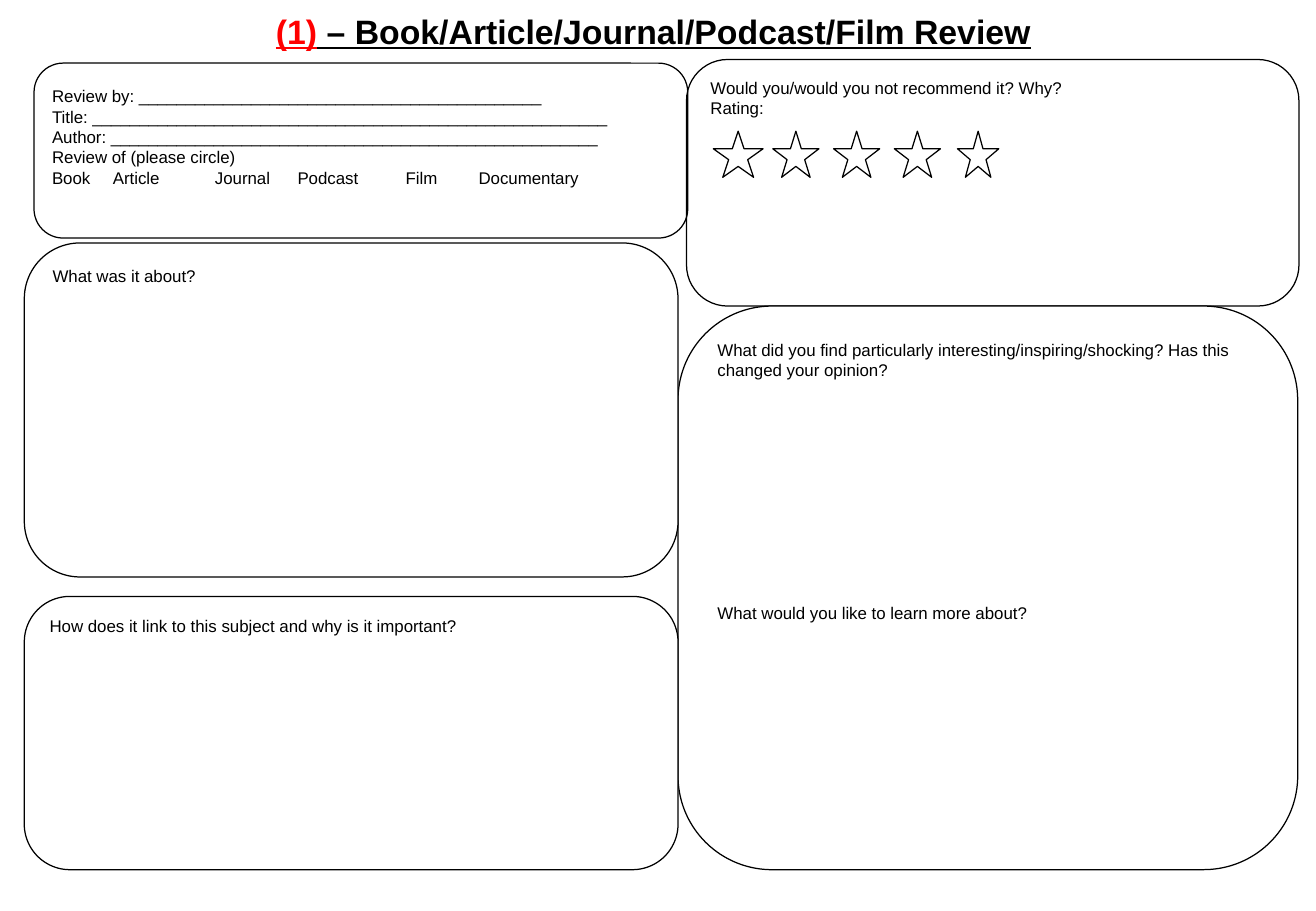
from lxml import etree
from pptx import Presentation
from pptx import util as u
from pptx.dml.color import RGBColor
from pptx.enum import shapes, text
from pptx.oxml.ns import qn

PX = 9144  # 100 px to the inch


def color(value):
    return RGBColor.from_string(value)


class ReviewSheet:
    font, ink, paper, accent = "Arial", "000000", "FFFFFF", "FF0000"
    body_size, title_size, line_width = 10, 20, 0.75

    def __init__(self, width, height):
        self.presentation = Presentation()
        self.presentation.slide_width = u.Emu(width * PX)
        self.presentation.slide_height = u.Emu(height * PX)
        self.slide = self.presentation.slides.add_slide(self.presentation.slide_layouts[6])

    def style_run(self, run, size, ink):
        run.font.name = self.font
        run.font.size = u.Pt(size)
        run.font.color.rgb = color(ink)

    def set_lines(self, shape, lines):
        frame = shape.text_frame
        frame.word_wrap = True
        frame.vertical_anchor = text.MSO_ANCHOR.TOP
        frame.text = "\n".join(lines)
        for paragraph in frame.paragraphs:
            paragraph.alignment = text.PP_ALIGN.LEFT
            for run in paragraph.runs:
                self.style_run(run, self.body_size, self.ink)
        return frame.paragraphs

    def outline(self, kind, box, filled=True):
        shape = self.slide.shapes.add_shape(kind, *(u.Emu(length * PX) for length in box))
        shape.shadow.inherit = False
        if filled:
            shape.fill.solid()
            shape.fill.fore_color.rgb = color(self.paper)
        else:
            shape.fill.background()
        shape.line.color.rgb = color(self.ink)
        shape.line.width = u.Pt(self.line_width)
        return shape

    def panel(self, box, lines=(), filled=True):
        shape = self.outline(shapes.MSO_SHAPE.FLOWCHART_ALTERNATE_PROCESS, box, filled)
        return self.set_lines(shape, lines)

    def label(self, box, lines):
        shape = self.slide.shapes.add_textbox(*(u.Emu(length * PX) for length in box))
        shape.fill.solid()
        shape.fill.fore_color.rgb = color(self.paper)
        return self.set_lines(shape, lines)

    def title(self, box, number, wording):
        paragraph = self.label(box, [number])[0]
        paragraph.alignment = text.PP_ALIGN.CENTER
        paragraph.add_run().text = wording
        for run, ink in zip(paragraph.runs, (self.accent, self.ink)):
            self.style_run(run, self.title_size, ink)
            run.font.bold = run.font.underline = True

    def tab_stops(self, paragraph, stops):
        tabs = etree.SubElement(paragraph._p.get_or_add_pPr(), qn("a:tabLst"))
        for stop in stops:
            etree.SubElement(tabs, qn("a:tab"), pos=str(stop * PX), algn="l")

    def star(self, left, top, width, height):
        self.outline(shapes.MSO_SHAPE.STAR_5_POINT, (left, top, width, height))


def main():
    sheet = ReviewSheet(1083, 750)

    # Right column: recommendation, then opinion and further learning
    sheet.panel((565, 49, 504, 203), ["Would you/would you not recommend it? Why?", "Rating:"])
    opinion = sheet.panel((558, 252, 510, 464), [
        "What did you find particularly interesting/inspiring/shocking? "
        "Has this changed your opinion?",
        "What would you like to learn more about?",
    ])
    opinion[1].space_before = u.Pt(132)

    # Left column: subject link, summary and details frame
    sheet.panel((20, 491, 538, 225), ["How does it link to this subject and why is it important?"])
    sheet.panel((20, 200, 538, 275), ["What was it about?"])
    sheet.panel((28, 52, 538, 144), filled=False)

    # Heading
    sheet.title((148, 4, 780, 40), "(1)", " – Book/Article/Journal/Podcast/Film Review")

    # Review details with lines to fill in
    blanks = [("Review by", 43), ("Title", 55), ("Author", 52)]
    media = ["Book", "Article", "Journal", "Podcast", "Film", "Documentary"]
    details = sheet.label(
        (33, 66, 525, 103),
        [f"{name}: {'_' * count}" for name, count in blanks]
        + ["Review of (please circle)", "\t".join(media)],
    )
    sheet.tab_stops(details[-1], (50, 134, 202, 291, 351))

    # Rating stars
    for left, width in ((587, 41), (636, 38), (686, 38), (736, 38), (788, 34)):
        sheet.star(left, 108, width, 38)

    sheet.presentation.save("out.pptx")


if __name__ == "__main__":
    main()
